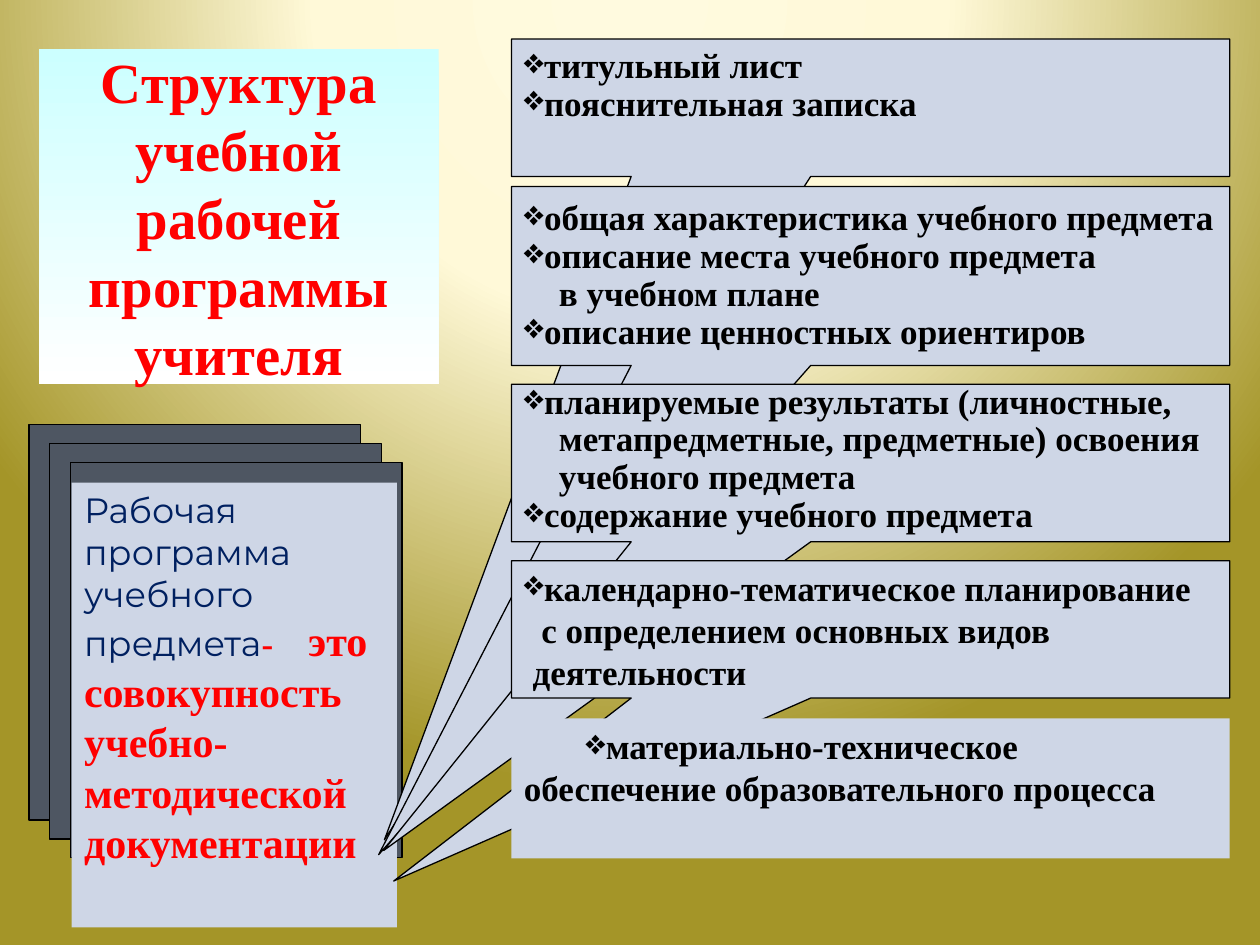
from pptx import Presentation, util as u
from pptx.dml.color import RGBColor
from pptx.enum import shapes, text
from pptx.oxml import parse_xml
from pptx.oxml.ns import qn
from lxml import etree

COLORS = {
    "panel": "CED6E6", "sheet": "4E5662", "black": "000000", "red": "FF0000",
    "navy": "002060", "aqua": "CCFFFF", "white": "FFFFFF",
}
SERIF, SANS = "Times New Roman", "Montserrat"

TITLE = "Структура учебной рабочей программы учителя"
DEFINITION = [  # wording, font, size, colour, bold
    ("Рабочая программа учебного предмета", SANS, 20, "navy", False),
    ("-\t", SERIF, 20, "red", True),
    ("это совокупность учебно-методической документации", SERIF, 24, "red", True),
]
# Lines are (wording, left indent); an indent of None marks a bulleted line
CALLOUTS = [
    dict(top=22.3, height=78.5, tip=(-0.677, 5.33), spacing=0.9, lift=25, lines=[
        ("титульный лист", None),
        ("пояснительная записка", None)]),
    dict(top=106.6, height=102.2, tip=(-0.685, 3.236), spacing=0.9, lift=0, lines=[
        ("общая характеристика учебного предмета", None),
        ("описание места учебного предмета", None),
        ("в учебном плане", 20),
        ("описание ценностных ориентиров", None)]),
    dict(top=219.6, height=90, tip=(-0.678, 2.46), spacing=0.9, lift=4, lines=[
        ("планируемые результаты (личностные,", None),
        ("метапредметные, предметные) освоения", 20),
        ("учебного предмета", 20),
        ("содержание учебного предмета", None)]),
    dict(top=320.4, height=78.5, tip=(-0.664, 1.832), spacing=1, lift=0, lines=[
        ("календарно-тематическое планирование", None),
        ("с определением основных видов", 10),
        ("деятельности", 5)]),
]
LAST_ITEM = "материально-техническое обеспечение образовательного процесса"
LIST_LEFT, LIST_WIDTH = 292.3, 410.4

BACKGROUND = """
<p:bg xmlns:p="http://schemas.openxmlformats.org/presentationml/2006/main"
      xmlns:a="http://schemas.openxmlformats.org/drawingml/2006/main"><p:bgPr>
  <a:gradFill rotWithShape="1"><a:gsLst>
    <a:gs pos="0"><a:srgbClr val="FFFADF"/></a:gs>
    <a:gs pos="40000"><a:srgbClr val="FFF9D8"/></a:gs>
    <a:gs pos="100000"><a:srgbClr val="A49528"/></a:gs></a:gsLst>
    <a:path path="circle"><a:fillToRect l="50000" t="-80000" r="50000" b="180000"/></a:path>
  </a:gradFill><a:effectLst/></p:bgPr></p:bg>"""


def color(name):
    return RGBColor.from_string(COLORS[name])


def add_box(page, kind, left, top, width, height, fill, outlined):
    box = page.shapes.add_shape(kind, u.Pt(left), u.Pt(top), u.Pt(width), u.Pt(height))
    box.shadow.inherit = False
    box.fill.solid()
    box.fill.fore_color.rgb = color(fill)
    if outlined:
        box.line.color.rgb = color("black")
        box.line.width = u.Pt(0.75)
    else:
        box.line.fill.background()
    return box


def style(span, font, size, ink, bold=True):
    span.font.name, span.font.size, span.font.bold = font, u.Pt(size), bold
    span.font.color.rgb = color(ink)


def set_indent(para, left=0, first=0, bullet=False):
    props = para._p.get_or_add_pPr()
    props.set("marL", str(u.Pt(left)))
    props.set("indent", str(u.Pt(first)))
    if bullet:
        etree.SubElement(props, qn("a:buChar")).set("char", "❖")


def write_list(box, lines, spacing=1, first=0):
    frame = box.text_frame
    for index, (wording, indent) in enumerate(lines):
        para = frame.paragraphs[0] if index == 0 else frame.add_paragraph()
        para.text = wording
        para.alignment = text.PP_ALIGN.LEFT
        para.line_spacing = spacing
        set_indent(para, indent or 0, first, bullet=indent is None)
        style(para.runs[0], SERIF, 20, "black")


deck = Presentation()
deck.slide_width, deck.slide_height = u.Pt(720), u.Pt(540)
page = deck.slides.add_slide(deck.slide_layouts[5])
page.element.cSld.insert(0, parse_xml(BACKGROUND))
RECT = shapes.MSO_SHAPE.RECTANGLE

# Title
title = page.shapes.title
title.left, title.top, title.width, title.height = map(u.Pt, (22.3, 28, 228.3, 191.5))
title.fill.gradient()
title.fill.gradient_angle = 270
for stop, name in zip(title.fill.gradient_stops, ("aqua", "white")):
    stop.color.rgb = color(name)
frame = title.text_frame
frame.text = TITLE
frame.word_wrap = True
frame.auto_size = text.MSO_AUTO_SIZE.NONE
frame.vertical_anchor = text.MSO_ANCHOR.MIDDLE
frame.paragraphs[0].alignment = text.PP_ALIGN.CENTER
style(frame.paragraphs[0].runs[0], SERIF, 32.4, "red")

# Stack of sheets with the definition in front
for step in range(3):
    add_box(page, RECT, 16.6 + 11.9 * step, 242.6 + 10.8 * step, 189.4, 226, "sheet", True)
panel = add_box(page, RECT, 41, 275.8, 185.8, 254.2, "panel", False)
frame = panel.text_frame
frame.word_wrap = True
frame.vertical_anchor = text.MSO_ANCHOR.TOP
para = frame.paragraphs[0]
para.alignment = text.PP_ALIGN.LEFT
tabs = etree.SubElement(para._p.get_or_add_pPr(), qn("a:tabLst"))
tab = etree.SubElement(tabs, qn("a:tab"))
tab.set("pos", str(u.Pt(128)))
tab.set("algn", "l")
for wording, *look in DEFINITION:
    span = para.add_run()
    span.text = wording
    style(span, *look)

# Callouts pointing at the definition
for item in CALLOUTS:
    box = add_box(page, shapes.MSO_SHAPE.RECTANGULAR_CALLOUT, LIST_LEFT, item["top"],
                  LIST_WIDTH, item["height"], "panel", True)
    box.adjustments[0], box.adjustments[1] = item["tip"]
    box.text_frame.word_wrap = False
    box.text_frame.vertical_anchor = text.MSO_ANCHOR.MIDDLE
    box.text_frame.margin_bottom = u.Pt(3.6 + item["lift"])
    write_list(box, item["lines"], item["spacing"])

# Last item
box = add_box(page, RECT, LIST_LEFT, 410.6, LIST_WIDTH, 80, "panel", False)
box.text_frame.word_wrap = True
box.text_frame.vertical_anchor = text.MSO_ANCHOR.TOP
write_list(box, [(LAST_ITEM, None)], first=35.3)

deck.save("out.pptx")
